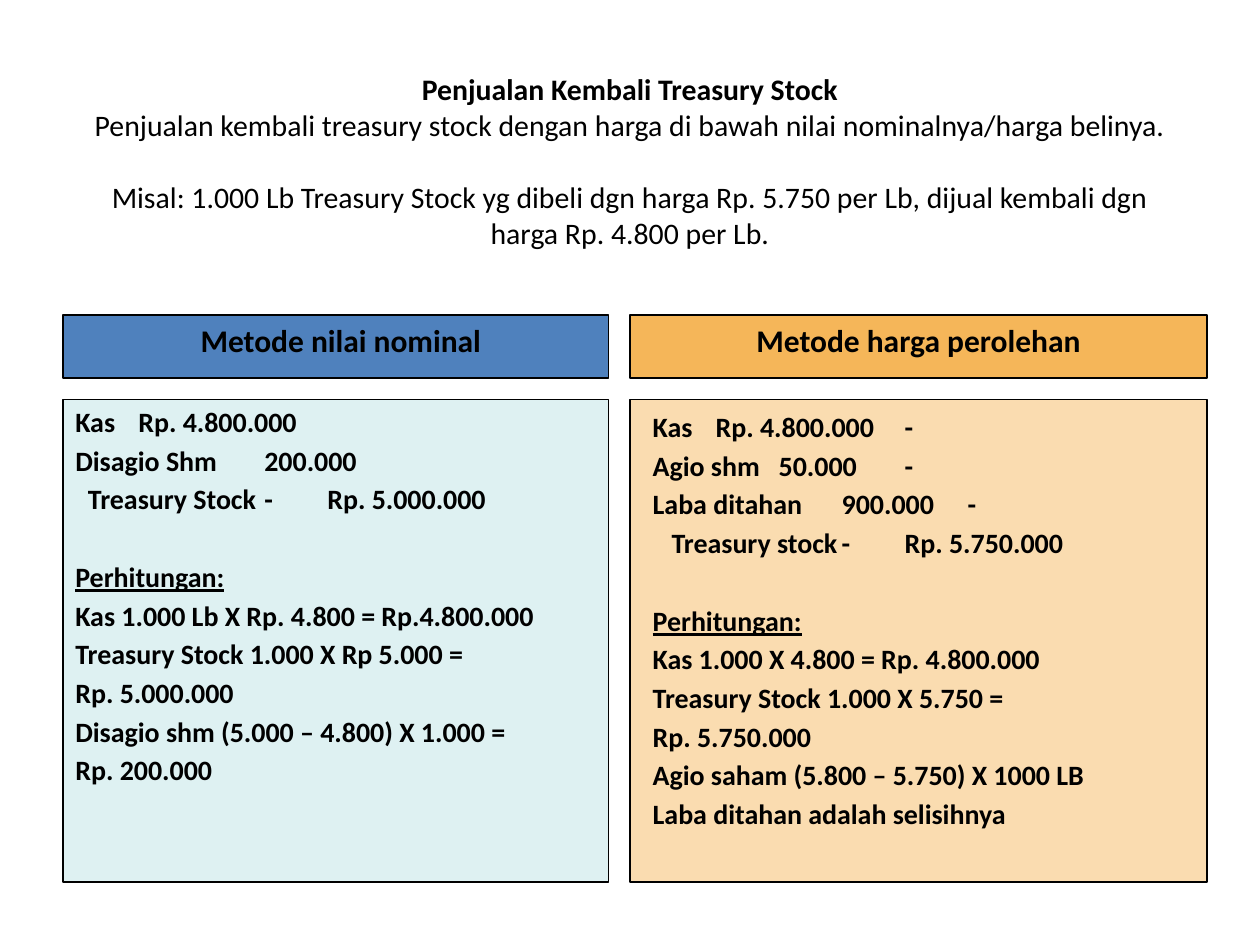
from pptx import Presentation
from pptx.dml.color import RGBColor
from pptx.enum.shapes import MSO_SHAPE
from pptx.enum.text import MSO_ANCHOR, PP_ALIGN
from pptx.oxml.ns import qn
from pptx.util import Inches, Pt
from lxml import etree

RECTANGLE = MSO_SHAPE.RECTANGLE
TOP, MIDDLE = MSO_ANCHOR.TOP, MSO_ANCHOR.MIDDLE
LEFT, CENTER = PP_ALIGN.LEFT, PP_ALIGN.CENTER

FONT = "Calibri"
BLACK = "000000"
HEADER_TOP, HEADER_HEIGHT = 2.5, 0.5
BODY_TOP, BODY_HEIGHT = 3.17, 3.83
LINE_GAP = 2.9      # points between lines of a panel
SECTION_GAP = 25.3  # points above the calculation
TITLE_GAP = 20.75   # points above the example

TITLE = [
    ("Penjualan Kembali Treasury Stock", {"bold": True}),
    ("Penjualan kembali treasury stock dengan harga di bawah nilai "
     "nominalnya/harga belinya.", {}),
    ("Misal: 1.000 Lb Treasury Stock yg dibeli dgn harga Rp. 5.750 per Lb, "
     "dijual kembali dgn harga Rp. 4.800 per Lb.", {"before": TITLE_GAP}),
]

# Tab stops are (inches, alignment) pairs.
PANELS = [
    {
        "left": 0.5, "width": 4.33, "header_inset": 0.18, "body_inset": (0.1, 0.04),
        "header": "Metode nilai nominal",
        "header_fill": "4F81BD", "body_fill": "DEF1F2",
        "debits": ["Kas\tRp. 4.800.000", "Disagio Shm\t200.000"],
        "debit_tabs": [(2.53, "r")],
        "credit": "Treasury Stock\t-\tRp. 5.000.000",
        "credit_tabs": [(1.89, "l"), (3.46, "r")], "credit_indent": 0.1,
        "calculation": [
            "Kas 1.000 Lb X Rp. 4.800 = Rp.4.800.000",
            "Treasury Stock 1.000 X Rp 5.000 =",
            "Rp. 5.000.000",
            "Disagio shm (5.000 – 4.800) X 1.000 =",
            "Rp. 200.000",
        ],
    },
    {
        "left": 5, "width": 4.58, "header_inset": 0.1, "body_inset": (0.18, 0.08),
        "header": "Metode harga perolehan",
        "header_fill": "F5B659", "body_fill": "FADCB0",
        "debits": ["Kas\tRp. 4.800.000\t-", "Agio shm\t50.000\t-",
                   "Laba ditahan\t900.000\t-"],
        "debit_tabs": [(2.22, "r"), (2.67, "l")],
        "credit": "Treasury stock\t-\tRp. 5.750.000",
        "credit_tabs": [(1.76, "l"), (3.44, "r")], "credit_indent": 0.15,
        "calculation": [
            "Kas 1.000 X 4.800 = Rp. 4.800.000",
            "Treasury Stock 1.000 X 5.750 =",
            "Rp. 5.750.000",
            "Agio saham (5.800 – 5.750) X 1000 LB",
            "Laba ditahan adalah selisihnya",
        ],
    },
]


def color(value):
    return RGBColor.from_string(value)


def set_tabs(paragraph, tabs, indent):
    properties = paragraph._p.get_or_add_pPr()
    properties.set("marL", "0")
    properties.set("indent", str(Inches(indent)))
    tab_list = etree.SubElement(properties, qn("a:tabLst"))
    for position, alignment in tabs:
        etree.SubElement(tab_list, qn("a:tab"),
                         pos=str(Inches(position)), algn=alignment)


def write(paragraph, text, size=16, bold=True, underline=False, align=LEFT,
          before=0, tabs=(), indent=0):
    paragraph.alignment = align
    paragraph.space_before = Pt(before)
    if tabs:
        set_tabs(paragraph, tabs, indent)
    run = paragraph.add_run()
    run.text = text
    font = run.font
    font.name, font.size = FONT, Pt(size)
    font.bold, font.underline = bold, underline
    font.color.rgb = color(BLACK)


def fill_frame(frame, lines, anchor=TOP, inset=(0.1, 0.05)):
    """Write (text, format) lines into a frame, one paragraph each."""
    frame.word_wrap = True
    frame.vertical_anchor = anchor
    frame.margin_left, frame.margin_top = (Inches(value) for value in inset)
    for index, (text, style) in enumerate(lines):
        paragraph = frame.add_paragraph() if index else frame.paragraphs[0]
        write(paragraph, text, **style)


def add_box(slide, box, fill):
    shape = slide.shapes.add_shape(RECTANGLE, *map(Inches, box))
    shape.shadow.inherit = False
    shape.fill.solid()
    shape.fill.fore_color.rgb = color(fill)
    shape.line.color.rgb = color(BLACK)
    shape.line.width = Pt(0.75)
    return shape


def add_title(slide, box):
    frame = slide.shapes.add_textbox(*map(Inches, box)).text_frame
    base = {"size": 17, "bold": False, "align": CENTER}
    fill_frame(frame, [(text, base | style) for text, style in TITLE], MIDDLE)


def add_panel(slide, panel):
    """Add a method's heading bar and, below it, its journal and calculation."""
    left, width = panel["left"], panel["width"]
    header = add_box(slide, (left, HEADER_TOP, width, HEADER_HEIGHT),
                     panel["header_fill"])
    fill_frame(header.text_frame,
               [(panel["header"], {"size": 18, "align": CENTER})],
               inset=(panel["header_inset"], 0.05))

    body = add_box(slide, (left, BODY_TOP, width, BODY_HEIGHT),
                   panel["body_fill"])
    spaced = {"before": LINE_GAP}
    lines = [(text, spaced | {"tabs": panel["debit_tabs"]})
             for text in panel["debits"]]
    lines[0][1]["before"] = 0
    lines.append((panel["credit"], spaced | {"tabs": panel["credit_tabs"],
                                             "indent": panel["credit_indent"]}))
    lines.append(("Perhitungan:", {"underline": True, "before": SECTION_GAP}))
    lines += [(text, spaced) for text in panel["calculation"]]
    fill_frame(body.text_frame, lines, inset=panel["body_inset"])


def main():
    presentation = Presentation()
    presentation.slide_width = Inches(10)
    presentation.slide_height = Inches(7.5)
    slide = presentation.slides.add_slide(presentation.slide_layouts[6])
    add_title(slide, (0.5, 0.3, 9, 1.95))
    for panel in PANELS:
        add_panel(slide, panel)
    presentation.save("out.pptx")


if __name__ == "__main__":
    main()
